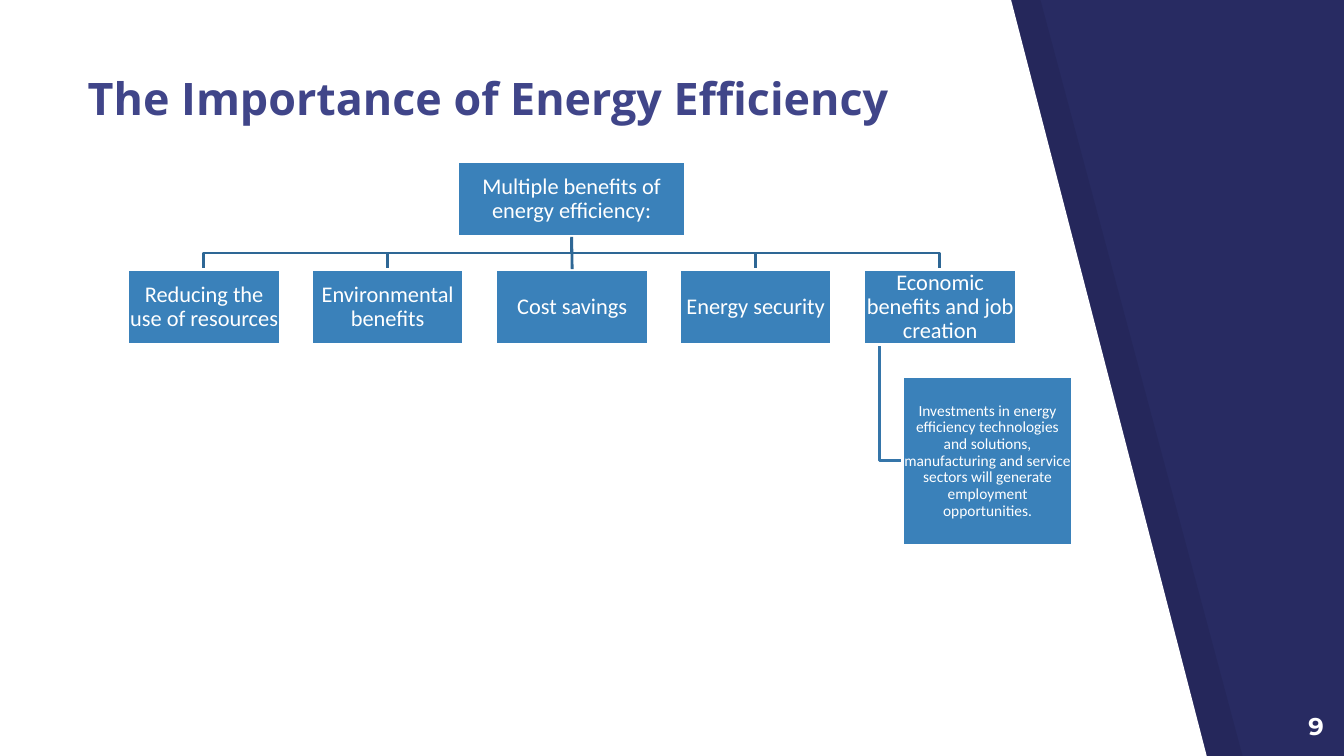
from lxml.etree import SubElement
from pptx import Presentation
from pptx.dml.color import RGBColor
from pptx.enum.shapes import MSO_CONNECTOR, MSO_SHAPE
from pptx.enum.text import MSO_ANCHOR, PP_ALIGN
from pptx.oxml.ns import qn
from pptx.util import Pt

PX = 9144  # 100 px to the inch
NAVY, WHITE, TITLE_BLUE = "282B62", "FFFFFF", "404589"
BOX_BLUE, BRANCH_BLUE, DETAIL_BLUE = "3A81BA", "2E6795", "3575A9"

ROOT = "Multiple benefits of energy efficiency:"
BENEFITS = [
    "Reducing the use of resources",
    "Environmental benefits",
    "Cost savings",
    "Energy security",
    "Economic benefits and job creation",
]
DETAIL = (
    "Investments in energy efficiency technologies and solutions, manufacturing "
    "and service sectors will generate employment opportunities."
)


def color(value):
    return RGBColor.from_string(value)


def emu(*lengths):
    return [length * PX for length in lengths]


def write(shape, text, inset, align, anchor, spacing=1.0, **font_format):
    frame = shape.text_frame
    frame.word_wrap = True
    frame.vertical_anchor = anchor
    for side in ("left", "top", "right", "bottom"):
        setattr(frame, f"margin_{side}", inset * PX)
    paragraph = frame.paragraphs[0]
    paragraph.alignment = align
    paragraph.line_spacing = spacing
    run = paragraph.add_run()
    run.text = text
    run.font.color.rgb = color(font_format.pop("color"))
    for name, value in font_format.items():
        setattr(run.font, name, value)


def set_line(shape, line_color):
    shape.line.color.rgb = color(line_color)
    shape.line.width = Pt(2)


def add_outline(slide, points, close):
    builder = slide.shapes.build_freeform(*points[0], scale=PX)
    builder.add_line_segments(points[1:], close=close)
    shape = builder.convert_to_shape()
    shape.shadow.inherit = False
    return shape


def add_panel(slide, points, fill, opacity=100):
    panel = add_outline(slide, points, True)
    panel.fill.solid()
    panel.fill.fore_color.rgb = color(fill)
    panel.line.fill.background()
    if opacity < 100:
        fill_color = panel.fill._xPr.find(qn("a:solidFill"))[0]
        SubElement(fill_color, qn("a:alpha"), val=str(opacity * 1000))


def add_branch(slide, points, line_color):
    branch = add_outline(slide, points, False)
    branch.fill.background()
    set_line(branch, line_color)


def add_box(slide, box, text, size):
    shape = slide.shapes.add_shape(MSO_SHAPE.RECTANGLE, *emu(*box))
    shape.shadow.inherit = False
    shape.fill.solid()
    shape.fill.fore_color.rgb = color(BOX_BLUE)
    set_line(shape, WHITE)
    write(shape, text, 1, PP_ALIGN.CENTER, MSO_ANCHOR.MIDDLE, 0.9,
          name="Calibri", size=Pt(size), color=WHITE)
    return shape


def add_stem(slide, upper, lower):
    stem = slide.shapes.add_connector(MSO_CONNECTOR.STRAIGHT, 0, 0, 0, 0)
    stem.begin_connect(upper, 2)
    stem.end_connect(lower, 0)
    set_line(stem, BRANCH_BLUE)
    SubElement(stem._element.spPr, qn("a:effectLst"))


def build_background(slide, width, height):
    slide.background.fill.solid()
    slide.background.fill.fore_color.rgb = color(NAVY)
    # Dark slanted band, then the white page over it
    add_panel(slide, [(33, -2), (33, height + 2), (width - 100, height + 2),
                      (width - 301, 0)], "000000", 7)
    add_panel(slide, [(0, -16), (0, height + 12), (width - 133, height + 12),
                      (width - 334, -15)], WHITE)


def build_heading(slide, box):
    title = slide.shapes.add_textbox(*emu(*box))
    write(title, "The Importance of Energy Efficiency", 13, PP_ALIGN.LEFT,
          MSO_ANCHOR.BOTTOM, name="Open Sans", size=Pt(32), bold=True, color=TITLE_BLUE)


def build_page_number(slide, box):
    number = slide.shapes.add_textbox(*emu(*box))
    write(number, "9", 13, PP_ALIGN.RIGHT, MSO_ANCHOR.TOP,
          name="Montserrat", size=Pt(17.3), bold=True, color=WHITE)


def build_benefit_tree(slide, left, top, width):
    box_width, box_height, gap = 151, 75, 32
    root_width = box_width * 3 // 2
    center = left + width // 2
    root_bottom = top + box_height
    row_top = root_bottom + gap
    row_bottom = row_top + box_height
    middle = root_bottom + gap // 2
    lefts = [left + i * (width - box_width) // (len(BENEFITS) - 1)
             for i in range(len(BENEFITS))]

    # Branches from the root to the outer boxes
    for box_left in lefts:
        x = box_left + box_width // 2
        if x != center:
            add_branch(slide, [(center, root_bottom), (center, middle),
                               (x, middle), (x, row_top)], BRANCH_BLUE)

    # Branch from the last box to its detail
    detail_left, detail_top = lefts[-1] + 38, row_bottom + gap
    detail_width, detail_height = 169, 167
    x, y = lefts[-1] + box_width // 10, detail_top + detail_height // 2
    add_branch(slide, [(x, row_bottom), (x, y), (detail_left, y)], DETAIL_BLUE)

    # Boxes and the straight central stem
    root = add_box(slide, (center - root_width // 2, top, root_width, box_height), ROOT, 16)
    benefits = [add_box(slide, (box_left, row_top, box_width, box_height), text, 16)
                for box_left, text in zip(lefts, BENEFITS)]
    add_box(slide, (detail_left, detail_top, detail_width, detail_height), DETAIL, 11)
    add_stem(slide, root, benefits[len(benefits) // 2])


def main():
    width, height = 1333, 750
    presentation = Presentation()
    presentation.slide_width, presentation.slide_height = emu(width, height)
    slide = presentation.slides.add_slide(presentation.slide_layouts[6])
    build_background(slide, width, height)
    build_heading(slide, (74, 5, 926, 131))
    build_page_number(slide, (1246, 693, 80, 57))
    build_benefit_tree(slide, 127, 160, 881)
    presentation.save("out.pptx")


if __name__ == "__main__":
    main()
